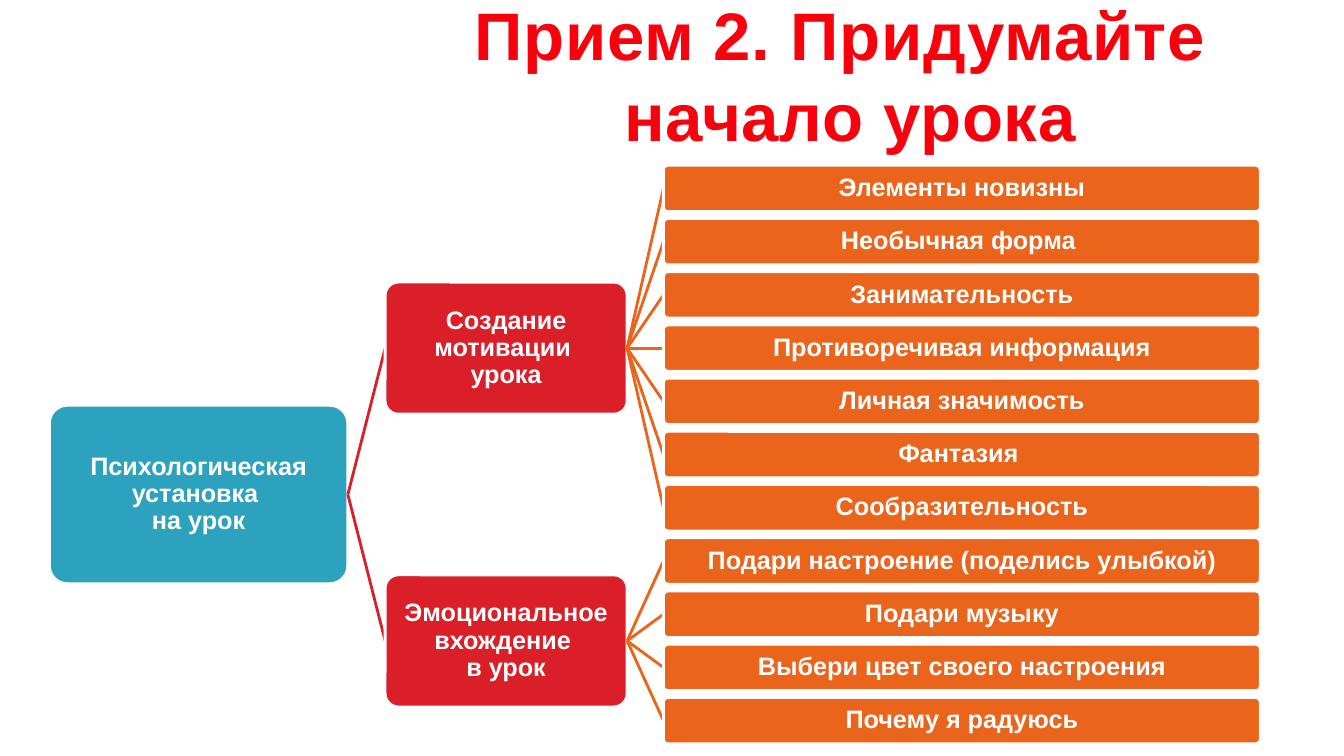
"""Build the slide on ways to open a lesson: a three-level tree under a title."""
from lxml import etree
from pptx import Presentation, util as u
from pptx.dml import color
from pptx.enum import shapes, text
from pptx.oxml import ns

TITLE = "Прием 2. Придумайте \vначало урока"
ROOT = "Психологическая установка \vна урок"
BRANCHES = [
    ("Создание мотивации \vурока", [
        "Элементы новизны", "Необычная форма ", "Занимательность",
        "Противоречивая информация", "Личная значимость", "Фантазия ",
        "Сообразительность"]),
    ("Эмоциональное вхождение \vв урок", [
        "Подари настроение (поделись улыбкой)", "Подари музыку",
        "Выбери цвет своего настроения", "Почему я радуюсь"]),
]
THEME = {
    "font": "Arial", "title_size": 48, "box_size": 18, "line": 2,
    "title": "F9000C", "title_end": "B00008", "white": "FFFFFF",
    "levels": ["2DA2BF", "DA1F28", "EB641B"],
}
LEVELS = [(0.49, 2.96, 1.77), (3.82, 2.4, 1.31), (6.58, 5.92, 0.46)]
FIRST_LEAF_CENTER, LEAF_PITCH = 1.87, 0.528


def rgb(name):
    return color.RGBColor.from_string(name)


def write(frame, wording, size, margin):
    frame.word_wrap = True
    frame.vertical_anchor = text.MSO_ANCHOR.MIDDLE
    frame.margin_left = frame.margin_right = u.Inches(margin * 2)
    frame.margin_top = frame.margin_bottom = u.Inches(margin)
    paragraph = frame.paragraphs[0]
    paragraph.text = wording
    paragraph.alignment = text.PP_ALIGN.CENTER
    font = paragraph.font
    font.name, font.size, font.bold = THEME["font"], u.Pt(size), True
    return paragraph


def add_title(slide):
    title = slide.shapes.add_textbox(
        u.Inches(3.52), u.Inches(0.02), u.Inches(9.83), u.Inches(1.43))
    paragraph = write(title.text_frame, TITLE, THEME["title_size"], 0.05)
    for run in paragraph.runs:
        fill = run.font.fill
        fill.gradient()
        fill.gradient_angle = 270
        for stop, position, name in zip(
                fill.gradient_stops, (0.25, 1), ("title", "title_end")):
            stop.position = position
            stop.color.rgb = rgb(THEME[name])
        run.font._element.set("spc", "50")


def add_box(slide, level, center, wording, parent=None):
    left, width, height = LEVELS[level]
    fill = rgb(THEME["levels"][level])
    if parent is not None:
        link = slide.shapes.add_connector(
            shapes.MSO_CONNECTOR.STRAIGHT, 0, 0, 0, 0)
        link.line.color.rgb = fill
        link.line.width = u.Pt(THEME["line"])
        etree.SubElement(link._element.spPr, ns.qn("a:effectLst"))
    box = slide.shapes.add_shape(
        shapes.MSO_SHAPE.ROUNDED_RECTANGLE, u.Inches(left),
        u.Inches(center - height / 2), u.Inches(width), u.Inches(height))
    box.adjustments[0] = 0.1
    box.shadow.inherit = False
    box.fill.solid()
    box.fill.fore_color.rgb = fill
    box.line.color.rgb = rgb(THEME["white"])
    box.line.width = u.Pt(THEME["line"])
    paragraph = write(box.text_frame, wording, THEME["box_size"], 0.01)
    paragraph.line_spacing = 0.9
    paragraph.font.color.rgb = rgb(THEME["white"])
    if parent is not None:
        link.begin_connect(parent, 3)
        link.end_connect(box, 1)
    return box


def add_tree(slide):
    placed, row = [], 0
    for name, leaves in BRANCHES:
        centers = [FIRST_LEAF_CENTER + LEAF_PITCH * (row + i)
                   for i in range(len(leaves))]
        placed.append((name, leaves, centers, sum(centers) / len(centers)))
        row += len(leaves)
    root_center = sum(middle for *_, middle in placed) / len(placed)
    root = add_box(slide, 0, root_center, ROOT)
    for name, leaves, centers, middle in placed:
        branch = add_box(slide, 1, middle, name, root)
        for leaf, center in zip(leaves, centers):
            add_box(slide, 2, center, leaf, branch)


def main():
    deck = Presentation()
    deck.slide_width, deck.slide_height = u.Inches(13.33), u.Inches(7.5)
    slide = deck.slides.add_slide(deck.slide_layouts[6])
    add_title(slide)
    add_tree(slide)
    deck.save("out.pptx")


if __name__ == "__main__":
    main()
